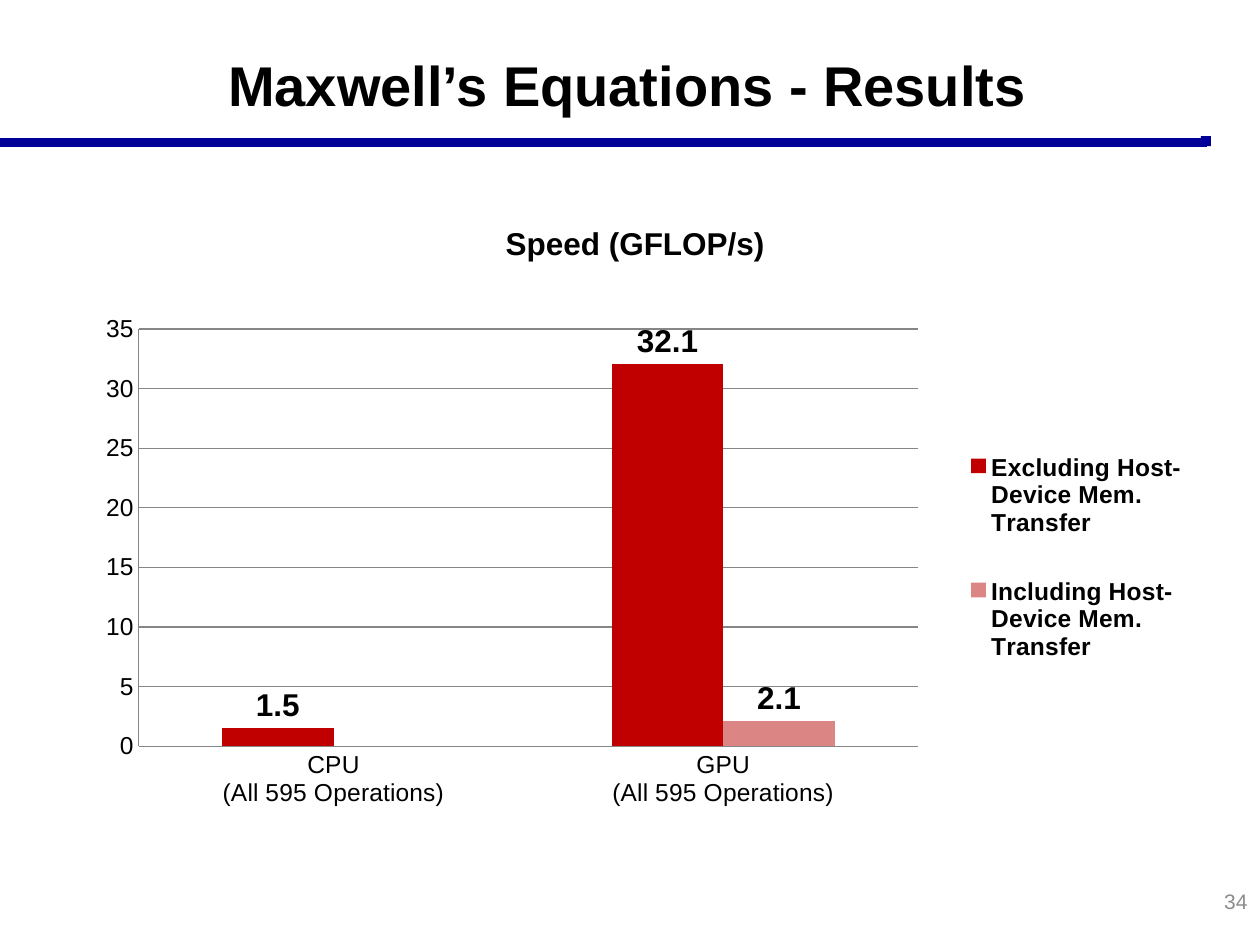
from dataclasses import dataclass

from lxml import etree
from pptx import Presentation
from pptx.chart.data import CategoryChartData
from pptx.dml.color import RGBColor
from pptx.enum.chart import (XL_CHART_TYPE, XL_LABEL_POSITION,
                             XL_LEGEND_POSITION, XL_TICK_MARK)
from pptx.enum.shapes import MSO_CONNECTOR, MSO_SHAPE
from pptx.enum.text import MSO_ANCHOR, PP_ALIGN
from pptx.oxml.ns import qn
from pptx.util import Inches, Pt

COLUMNS = XL_CHART_TYPE.COLUMN_CLUSTERED
OUTSIDE_END = XL_LABEL_POSITION.OUTSIDE_END
LEGEND_RIGHT = XL_LEGEND_POSITION.RIGHT
NO_TICK = XL_TICK_MARK.NONE
STRAIGHT = MSO_CONNECTOR.STRAIGHT
RECTANGLE = MSO_SHAPE.RECTANGLE
MIDDLE = MSO_ANCHOR.MIDDLE
CENTER, RIGHT = PP_ALIGN.CENTER, PP_ALIGN.RIGHT


@dataclass(frozen=True)
class Theme:
    font: str = "Arial"
    text: str = "000000"
    muted: str = "8C8C8C"
    rule: str = "000099"
    grid: str = "868686"
    title_size: int = 32
    heading_size: int = 18
    axis_size: int = 14
    number_size: int = 12


@dataclass(frozen=True)
class Label:
    text: str
    box: tuple[float, float, float, float]
    size: int
    color: str
    align: PP_ALIGN
    bold: bool = False


@dataclass(frozen=True)
class Series:
    name: str
    values: tuple[float | None, ...]
    color: str


THEME = Theme()
LABELS = [
    Label("34", (7.67, 6.95, 2.33, 0.4), THEME.number_size, THEME.muted, RIGHT),
    Label("Maxwell’s Equations - Results", (1.04, 0.21, 7.88, 0.92),
          THEME.title_size, THEME.text, CENTER, True),
]
CATEGORIES = [f"{unit}\n(All 595 Operations)" for unit in ("CPU", "GPU")]
SERIES = [
    Series("Excluding Host-Device Mem. Transfer", (1.5, 32.1), "C00000"),
    Series("Including Host-Device Mem. Transfer", (None, 2.1), "DB8585"),
]


def rgb(color: str) -> RGBColor:
    return RGBColor.from_string(color)


def style_font(font, size: int, color: str = THEME.text, bold: bool = False) -> None:
    font.name = THEME.font
    font.size = Pt(size)
    font.bold = bold
    font.color.rgb = rgb(color)


def add_label(slide, label: Label) -> None:
    tf = slide.shapes.add_textbox(*map(Inches, label.box)).text_frame
    tf.word_wrap = True
    tf.vertical_anchor = MIDDLE
    p = tf.paragraphs[0]
    p.text = label.text
    p.alignment = label.align
    style_font(p.runs[0].font, label.size, label.color, label.bold)


def add_rule(slide) -> None:
    line = slide.shapes.add_connector(STRAIGHT, 0, Inches(1.13), Inches(9.58), Inches(1.13))
    line.line.color.rgb = rgb(THEME.rule)
    line.line.width = Pt(5)
    etree.SubElement(line._element.spPr, qn("a:effectLst"))
    end = slide.shapes.add_shape(RECTANGLE, *map(Inches, (9.53, 1.08, 0.08, 0.08)))
    end.shadow.inherit = False
    end.fill.solid()
    end.fill.fore_color.rgb = rgb(THEME.rule)
    end.line.fill.background()


def set_layout(element, after: str, inner: bool = False, **place: float) -> None:
    """Place a chart part by fractions of the chart area."""
    for old in element.findall(qn("c:layout")):
        element.remove(old)
    layout = etree.Element(qn("c:layout"))
    manual = etree.SubElement(layout, qn("c:manualLayout"))
    settings = {"layoutTarget": "inner"} if inner else {}
    settings |= {"xMode": "edge", "yMode": "edge"} | place
    for tag, value in settings.items():
        etree.SubElement(manual, qn(f"c:{tag}")).set("val", str(value))
    previous = element.find(qn(after)) if after else None
    if previous is None:
        element.insert(0, layout)
    else:
        previous.addnext(layout)


def add_speed_chart(slide) -> None:
    data = CategoryChartData()
    data.categories = CATEGORIES
    for s in SERIES:
        data.add_series(s.name, s.values)
    frame = slide.shapes.add_chart(COLUMNS, *map(Inches, (0.29, 1.49, 9.43, 5.75)), data)
    chart = frame.chart
    style_font(chart.font, 10)

    # Title and legend
    title = chart.chart_title
    title.text_frame.text = "Speed (GFLOP/s)"
    style_font(title.text_frame.paragraphs[0].runs[0].font, THEME.heading_size, bold=True)
    title.include_in_layout = False
    set_layout(title._element, "c:tx", x=0.39, y=0.04)
    chart.has_legend = True
    legend = chart.legend
    legend.position = LEGEND_RIGHT
    legend.include_in_layout = False
    style_font(legend.font, THEME.axis_size, bold=True)
    set_layout(legend._element, "c:legendPos", x=0.77, y=0.31, w=0.21, h=0.4)

    # Axes
    for axis in (chart.category_axis, chart.value_axis):
        axis.major_tick_mark = axis.minor_tick_mark = NO_TICK
        axis.format.line.color.rgb = rgb(THEME.grid)
        style_font(axis.tick_labels.font, THEME.axis_size)
    scale = chart.value_axis
    scale.minimum_scale, scale.maximum_scale, scale.major_unit = 0, 35, 5
    scale.has_major_gridlines = True
    scale.major_gridlines.format.line.color.rgb = rgb(THEME.grid)

    # Columns
    plot = chart.plots[0]
    plot.gap_width = 150
    plot.overlap = 0
    plot.vary_by_categories = False
    for s, bars in zip(SERIES, plot.series):
        bars.format.fill.solid()
        bars.format.fill.fore_color.rgb = rgb(s.color)
        labels = bars.data_labels
        labels.show_value = True
        labels.position = OUTSIDE_END
        style_font(labels.font, THEME.heading_size, bold=True)
    plot_area = chart._chartSpace.find(".//" + qn("c:plotArea"))
    set_layout(plot_area, "", inner=True, x=0.086, y=0.195, w=0.656, h=0.576)


def main() -> None:
    prs = Presentation()
    prs.slide_width, prs.slide_height = Inches(10), Inches(7.5)
    slide = prs.slides.add_slide(prs.slide_layouts[6])
    add_rule(slide)
    for label in LABELS:
        add_label(slide, label)
    add_speed_chart(slide)
    prs.save("out.pptx")


if __name__ == "__main__":
    main()
